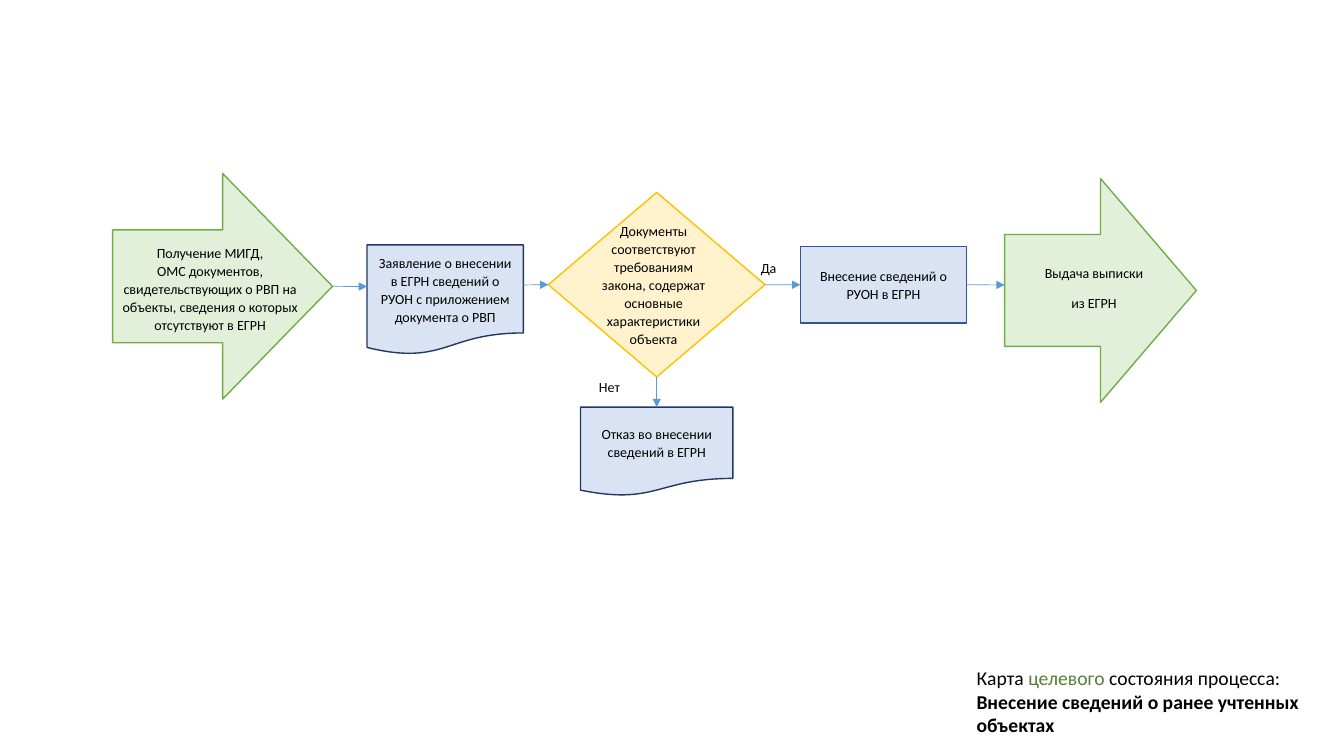
from pptx import Presentation
from pptx.dml.color import RGBColor
from pptx.enum.shapes import MSO_CONNECTOR, MSO_SHAPE as SHAPE
from pptx.enum.text import MSO_ANCHOR as ANCHOR, PP_ALIGN as ALIGN
from pptx.oxml.ns import qn
from pptx.util import Cm, Pt
from lxml.etree import SubElement

COLORS = {
    "text": "000000", "accent": "548235", "link": "5B9BD5",
    "green": "E2F0D9", "green_line": "70AD47",
    "blue": "DAE3F3", "doc_line": "203864", "step_line": "2F5597",
    "yellow": "FFF2CC", "yellow_line": "FFC000",
}
FONT = "Calibri"
STEP_FORMAT = {"alignment": ALIGN.CENTER, "line_spacing": 1.07, "space_after": Pt(0)}
SPACED_FORMAT = {**STEP_FORMAT, "space_after": Pt(8)}
NO_MARGINS = dict.fromkeys(
    ("margin_left", "margin_right", "margin_top", "margin_bottom"), 0)


def rgb(name):
    return RGBColor.from_string(COLORS[name])


def set_attrs(obj, values):
    for name, value in values.items():
        setattr(obj, name, value)


def add_run(p, text, size, color="text", bold=False):
    r = p.add_run()
    r.text = text
    set_attrs(r.font, {"name": FONT, "size": Pt(size), "bold": bold})
    r.font.color.rgb = rgb(color)


def write(sp, paragraphs, fmt, size=10, frame=None):
    """Fill a shape with paragraphs, each a list of (text, colour, bold)."""
    tf = sp.text_frame
    set_attrs(tf, {"word_wrap": True, "vertical_anchor": ANCHOR.MIDDLE, **(frame or {})})
    for i, runs in enumerate(paragraphs):
        p = tf.add_paragraph() if i else tf.paragraphs[0]
        set_attrs(p, fmt)
        for run in runs:
            add_run(p, run[0], size, *run[1:])


def add_block(s, kind, box, fill, line, text=None, fmt=STEP_FORMAT):
    sp = s.shapes.add_shape(kind, *map(Cm, box))
    sp.shadow.inherit = False
    sp.fill.solid()
    sp.fill.fore_color.rgb = rgb(fill)
    sp.line.color.rgb = rgb(line)
    sp.line.width = Pt(1)
    if text:
        write(sp, [[(text,)]], fmt)
    return sp


def add_text(s, box, paragraphs, fmt=STEP_FORMAT, **options):
    write(s.shapes.add_textbox(*map(Cm, box)), paragraphs, fmt, **options)


def add_link(s, start, end, begin=None, finish=None):
    """Draw an arrow; begin and finish are (shape, side) pairs to join."""
    link = s.shapes.add_connector(MSO_CONNECTOR.STRAIGHT, *map(Cm, start + end))
    if begin:
        link.begin_connect(*begin)
    if finish:
        link.end_connect(*finish)
    link.line.color.rgb = rgb("link")
    link.line.width = Pt(0.5)
    SubElement(link.line._get_or_add_ln(), qn("a:tailEnd"), type="triangle")
    SubElement(link._element.spPr, qn("a:effectLst"))


def main():
    prs = Presentation()
    prs.slide_width, prs.slide_height = Cm(33.87), Cm(19.05)
    s = prs.slides.add_slide(prs.slide_layouts[6])

    # Process steps
    receipt = add_block(s, SHAPE.RIGHT_ARROW, (2.84, 4.37, 5.54, 5.69),
                        "green", "green_line")
    add_block(s, SHAPE.FLOWCHART_DOCUMENT, (9.25, 6.17, 3.94, 2.77),
              "blue", "doc_line",
              "Заявление о внесении в ЕГРН сведений о РУОН с приложением документа о РВП")
    check = add_block(s, SHAPE.DIAMOND, (13.82, 4.85, 5.46, 4.65),
                      "yellow", "yellow_line")
    entry = add_block(s, SHAPE.RECTANGLE, (20.17, 6.21, 4.19, 1.93),
                      "blue", "step_line", "Внесение сведений о РУОН в ЕГРН",
                      SPACED_FORMAT)
    refusal = add_block(s, SHAPE.FLOWCHART_DOCUMENT, (14.63, 10.26, 3.84, 2.24),
                        "blue", "doc_line", "Отказ во внесении сведений в ЕГРН")
    add_block(s, SHAPE.RIGHT_ARROW, (25.32, 4.5, 4.83, 5.64), "green", "green_line")

    # Captions laid over the arrows and the diamond
    add_text(s, (2.77, 5.82, 5.05, 2.87), [
        [("Получение МИГД,",)],
        [("ОМС документов, свидетельствующих о РВП на объекты, "
          "сведения о которых отсутствуют в ЕГРН",)]])
    add_text(s, (14.68, 5.99, 3.58, 2.34), [
        [("Документы соответствуют требованиям закона, содержат "
          "основные характеристики объекта",)]])
    add_text(s, (25.68, 6.07, 3.78, 2.34),
             [[("Выдача выписки",)], [("из ЕГРН",)]], SPACED_FORMAT)

    # Links between steps
    add_link(s, (8.38, 7.22), (9.25, 7.22), begin=(receipt, 3))
    add_link(s, (13.19, 7.18), (13.82, 7.18), finish=(check, 1))
    add_link(s, (19.28, 7.18), (20.17, 7.18), (check, 3), (entry, 1))
    add_link(s, (24.36, 7.18), (25.32, 7.18), begin=(entry, 3))
    add_link(s, (16.55, 9.5), (16.55, 10.26), (check, 2), (refusal, 0))

    # Decision outcomes
    for answer, box in (("Да", (18.9, 6.35, 0.94, 0.76)),
                        ("Нет", (14.6, 9.35, 1.52, 0.79))):
        add_text(s, box, [[(answer,)]], SPACED_FORMAT, frame=NO_MARGINS)

    # Title in the corner
    add_text(s, (24.36, 16.66, 9.5, 2.06), [
        [("Карта ",), ("целевого", "accent"), (" состояния процесса:",)],
        [("Внесение сведений о ранее учтенных объектах", "text", True)]],
        {"alignment": ALIGN.LEFT}, size=14, frame={"vertical_anchor": ANCHOR.TOP})

    prs.save("out.pptx")


if __name__ == "__main__":
    main()
